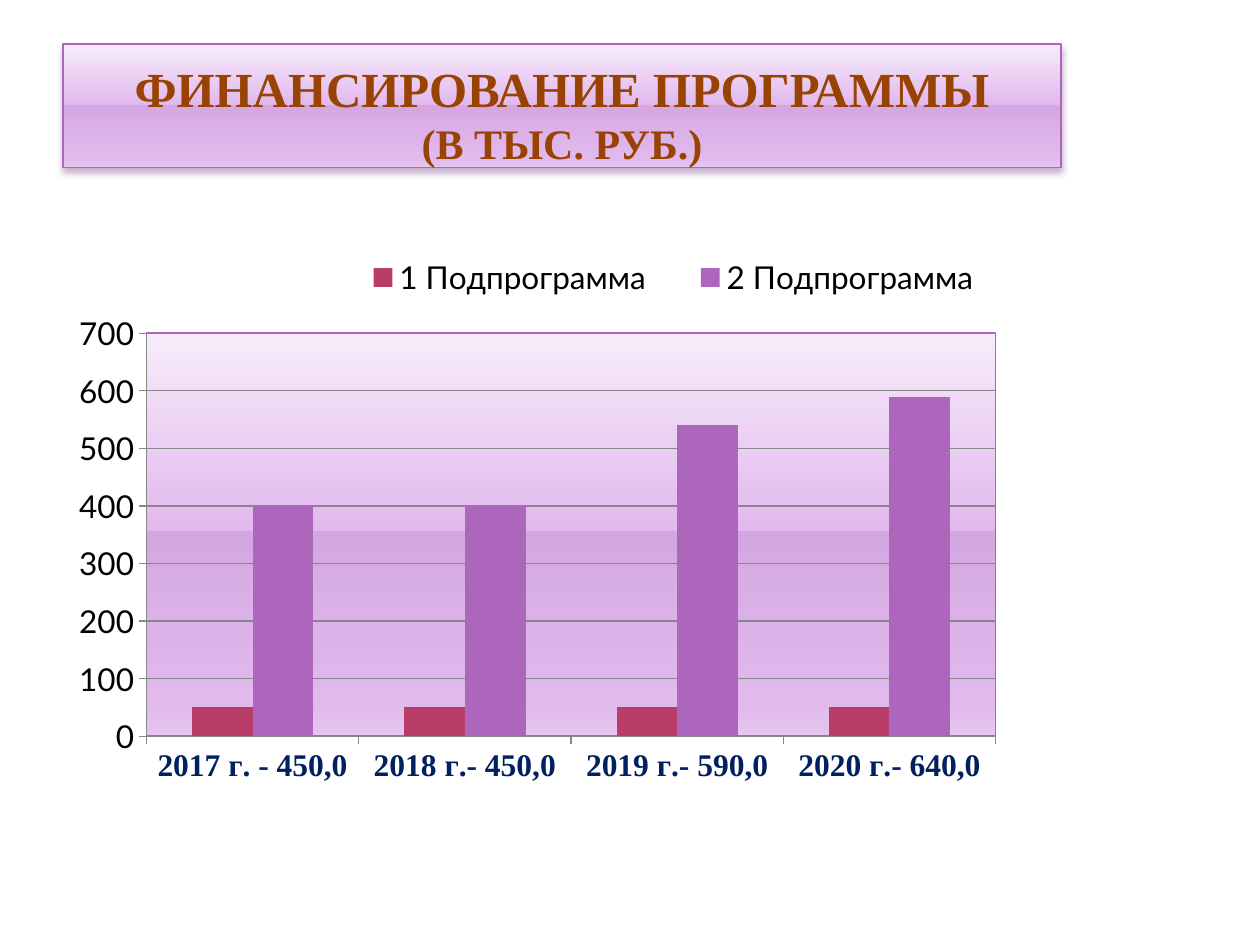
from dataclasses import dataclass

from lxml import etree
from pptx import Presentation
from pptx.chart import data as chart_data
from pptx.dml import color
from pptx.enum import chart as ch, shapes, text
from pptx.oxml import ns
from pptx.util import Cm, Pt


@dataclass(frozen=True)
class Theme:
    """Colours, fonts and type sizes of the slide."""
    heading: str = "984204"
    years: str = "002060"
    ink: str = "000000"
    axis: str = "878787"
    border: str = "AC66BB"
    shadow: str = "6E307B"
    programmes: tuple = ("B83D68", "AC66BB")
    gradient: tuple = ((0, "F7EBFB"), (49, "E2B9ED"), (49, "D5A7E2"),
                       (92, "E2B9ED"), (100, "E6C6EF"))
    serif: str = "Times New Roman"
    sans: str = "Lato"
    heading_size: int = 28
    unit_size: int = 24
    chart_size: int = 18


THEME = Theme()


def rgb(value):
    """Return a colour object for a hex value."""
    return color.RGBColor.from_string(value)


def add_element(parent, tag, **attributes):
    """Append a namespaced child element."""
    return etree.SubElement(parent, ns.qn(tag), {k: str(v) for k, v in attributes.items()})


def add_gradient(parent):
    """Append the vertical theme gradient."""
    gradient = add_element(parent, "a:gradFill", rotWithShape=1)
    stops = add_element(gradient, "a:gsLst")
    for position, value in THEME.gradient:
        stop = add_element(stops, "a:gs", pos=position * 1000)
        add_element(stop, "a:srgbClr", val=value)
    add_element(gradient, "a:lin", ang=5400000, scaled=0)
    return gradient


def add_shadow(properties):
    """Append a soft shadow that falls downwards."""
    effects = add_element(properties, "a:effectLst")
    shadow = add_element(effects, "a:outerShdw", blurRad=Pt(4), dist=Pt(2),
                         dir=5400000, rotWithShape=0)
    tint = add_element(shadow, "a:srgbClr", val=THEME.shadow)
    add_element(tint, "a:alpha", val=38000)


def style_font(font, size, name, value, bold=False):
    """Set size, face, colour and weight of a font."""
    font.size, font.name, font.bold = Pt(size), name, bold
    font.color.rgb = rgb(value)


def set_layout(parent, index, x, y, w, h, inner=False):
    """Place a chart part by fractions of the chart area."""
    for old in parent.findall(ns.qn("c:layout")):
        parent.remove(old)
    layout = etree.Element(ns.qn("c:layout"))
    manual = add_element(layout, "c:manualLayout")
    if inner:
        add_element(manual, "c:layoutTarget", val="inner")
    for mode in ("xMode", "yMode"):
        add_element(manual, f"c:{mode}", val="edge")
    for key, value in zip("xywh", (x, y, w, h)):
        add_element(manual, f"c:{key}", val=value)
    parent.insert(index, layout)


def add_heading(slide):
    """Add the gradient banner with its two-line heading."""
    banner = slide.shapes.add_shape(shapes.MSO_SHAPE.RECTANGLE,
                                    Cm(1.27), Cm(0.89), Cm(20.12), Cm(2.49))
    banner.line.color.rgb = rgb(THEME.border)
    banner.line.width = Pt(0.9)
    properties = banner.fill._xPr
    properties.find(ns.qn("a:ln")).addprevious(add_gradient(properties))
    add_shadow(properties)
    frame = banner.text_frame
    frame.word_wrap = True
    frame.vertical_anchor = text.MSO_ANCHOR.BOTTOM
    frame.margin_left = frame.margin_right = Cm(0.13)
    frame.margin_top = frame.margin_bottom = 0
    paragraph = frame.paragraphs[0]
    paragraph.alignment = text.PP_ALIGN.CENTER
    heading = paragraph.add_run()
    heading.text = "ФИНАНСИРОВАНИЕ ПРОГРАММЫ"
    style_font(heading.font, THEME.heading_size, THEME.serif, THEME.heading, True)
    paragraph.add_line_break()
    unit = paragraph.add_run()
    unit.text = "(В ТЫС. РУБ.)"
    style_font(unit.font, THEME.unit_size, THEME.serif, THEME.heading, True)


def style_axes(chart):
    """Format both axes and the gridlines."""
    years, amounts = chart.category_axis, chart.value_axis
    amounts.minimum_scale, amounts.maximum_scale, amounts.major_unit = 0, 700, 100
    amounts.has_major_gridlines = True
    for line in (years.format.line, amounts.format.line, amounts.major_gridlines.format.line):
        line.color.rgb = rgb(THEME.axis)
        line.width = Pt(0.75)
    for axis in (years, amounts):
        axis.major_tick_mark = ch.XL_TICK_MARK.OUTSIDE
    style_font(years.tick_labels.font, THEME.chart_size, THEME.serif, THEME.years, True)
    style_font(amounts.tick_labels.font, THEME.chart_size, THEME.sans, THEME.ink)


def style_plot_area(chart):
    """Place the plot area and give it the gradient and border."""
    area = chart._chartSpace.chart.plotArea
    set_layout(area, 0, 0.097, 0.182, 0.851, 0.63, inner=True)
    properties = add_element(area, "c:spPr")
    add_gradient(properties)
    border = add_element(properties, "a:ln", w=Pt(0.9))
    add_element(add_element(border, "a:solidFill"), "a:srgbClr", val=THEME.border)


def add_funding_chart(slide):
    """Add the clustered columns of funding by year."""
    funding = chart_data.CategoryChartData()
    funding.categories = ["2017 г. - 450,0", "2018 г.- 450,0",
                          "2019 г.- 590,0", "2020 г.- 640,0"]
    funding.add_series("1 Подпрограмма", (50, 50, 50, 50))
    funding.add_series("2 Подпрограмма", (400, 400, 540, 590))
    chart = slide.shapes.add_chart(ch.XL_CHART_TYPE.COLUMN_CLUSTERED, Cm(1), Cm(4.37),
                                   Cm(20.12), Cm(12.9), funding).chart
    chart.has_title = False
    style_font(chart.font, THEME.chart_size, THEME.sans, THEME.ink)
    plot = chart.plots[0]
    plot.gap_width, plot.overlap, plot.vary_by_categories = 150, 0, False
    for programme, value in zip(plot.series, THEME.programmes):
        programme.format.fill.solid()
        programme.format.fill.fore_color.rgb = rgb(value)
    style_axes(chart)
    style_plot_area(chart)
    chart.has_legend = True
    legend = chart.legend
    legend.position = ch.XL_LEGEND_POSITION.RIGHT
    legend.include_in_layout = False
    style_font(legend.font, THEME.chart_size, THEME.sans, THEME.ink)
    set_layout(legend._element, 1, 0.28, 0.05, 0.69, 0.09)


def main():
    """Build and save the slide."""
    deck = Presentation()
    deck.slide_width, deck.slide_height = Cm(25.4), Cm(19.05)
    slide = deck.slides.add_slide(deck.slide_layouts[6])
    add_heading(slide)
    add_funding_chart(slide)
    deck.save("out.pptx")


if __name__ == "__main__":
    main()
